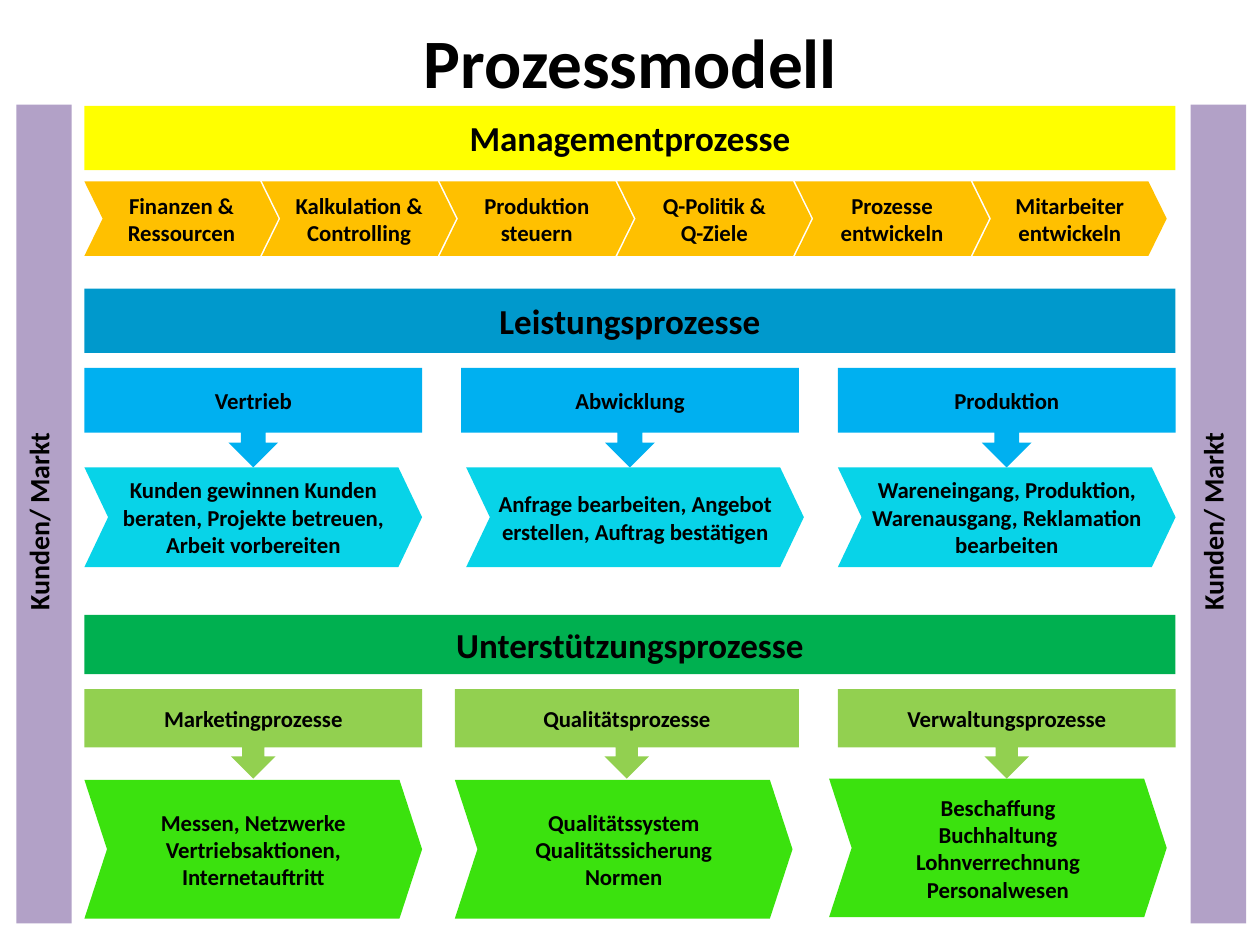
from pptx import Presentation
from pptx.dml.color import RGBColor
from pptx.enum.shapes import MSO_SHAPE
from pptx.enum.text import MSO_ANCHOR, PP_ALIGN
from pptx.util import Inches, Pt


def paint(hue):
    return RGBColor.from_string(hue)


def style(frame, size):
    for para in frame.paragraphs:
        para.alignment = PP_ALIGN.CENTER
        for run in para.runs:
            font = run.font
            font.name, font.size, font.bold = "Calibri", Pt(size), True
            font.color.rgb = paint("000000")


def block(slide, kind, box, hue, text, size, adjust=()):
    shape = slide.shapes.add_shape(kind, *[Inches(v) for v in box])
    shape.shadow.inherit = False
    shape.fill.solid()
    shape.fill.fore_color.rgb = paint(hue)
    shape.line.fill.background()
    for i, value in enumerate(adjust):
        shape.adjustments[i] = value
    frame = shape.text_frame
    frame.word_wrap = True
    frame.vertical_anchor = MSO_ANCHOR.MIDDLE
    frame.margin_left = frame.margin_right = Inches(0.04)
    frame.margin_top = frame.margin_bottom = Inches(0.04)
    frame.paragraphs[0].text = text
    style(frame, size)
    return shape


def heading(slide, box, text):
    title = slide.shapes.title
    title.left, title.top, title.width, title.height = [Inches(v) for v in box]
    title.text_frame.text = text
    title.text_frame.vertical_anchor = MSO_ANCHOR.MIDDLE
    style(title.text_frame, 39.6)


def market(slide, box):
    shape = block(slide, MSO_SHAPE.RECTANGLE, box, "B2A1C7", "Kunden/ Markt", 16)
    frame = shape.text_frame
    frame.vertical_anchor = MSO_ANCHOR.TOP
    frame.margin_top, frame.margin_bottom = Inches(0.12), 0
    # python-pptx has no public setting for text direction
    frame._txBody.bodyPr.set("vert", "vert270")


def banner(slide, box, hue, text):
    block(slide, MSO_SHAPE.RECTANGLE, box, hue, text, 20)


def chain(slide, box, hue, steps):
    left, top, width, height = box
    pitch = 1.41
    step = width - pitch * (len(steps) - 1)
    for i, text in enumerate(steps):
        block(slide, MSO_SHAPE.CHEVRON, (left + i * pitch, top, step, height),
              hue, text, 13, [0.246])


def stage(slide, head, body, hues, texts, notch):
    """A callout whose arrow points down to a chevron."""
    block(slide, MSO_SHAPE.DOWN_ARROW_CALLOUT, head, hues[0], texts[0], 13,
          [0.25, 0.25, 0.25, 0.65])
    block(slide, MSO_SHAPE.CHEVRON, body, hues[1], texts[1], 13, [notch])


def main():
    deck = Presentation()
    deck.slide_width, deck.slide_height = Inches(10), Inches(7.5)
    slide = deck.slides.add_slide(deck.slide_layouts[5])
    left, wide, col = 0.67, 8.66, 2.68

    # Title and the two market bars
    heading(slide, (0.13, 0.14, 9.75, 0.68), "Prozessmodell")
    for x in (0.13, 9.45):
        market(slide, (x, 0.83, 0.44, 6.5))

    # Management
    banner(slide, (left, 0.84, wide, 0.51), "FFFF00", "Managementprozesse")
    chain(slide, (left, 1.44, 8.59, 0.59), "FFC000", [
        "Finanzen & Ressourcen", "Kalkulation & Controlling",
        "Produktion steuern", "Q-Politik &\vQ-Ziele",
        "Prozesse entwickeln", "Mitarbeiter entwickeln"])

    # Core services: head left, body left, texts
    banner(slide, (left, 2.29, wide, 0.51), "0099CC", "Leistungsprozesse")
    core = [
        (left, left, "Vertrieb", "Kunden gewinnen Kunden beraten, "
         "Projekte betreuen, Arbeit vorbereiten"),
        (3.66, 3.7, "Abwicklung", "Anfrage bearbeiten, Angebot erstellen, "
         "Auftrag bestätigen"),
        (6.65, 6.65, "Produktion", "Wareneingang, Produktion, "
         "Warenausgang, Reklamation bearbeiten")]
    for x, low, *texts in core:
        stage(slide, (x, 2.92, col, 0.79), (low, 3.71, col, 0.79),
              ("00B0F0", "08D3E8"), texts, 0.238)

    # Support: head left, head width, body left, body top, texts
    banner(slide, (left, 4.88, wide, 0.47), "00B050", "Unterstützungsprozesse")
    support = [
        (left, col, left, 6.19, "Marketingprozesse",
         "Messen, Netzwerke Vertriebsaktionen, Internetauftritt"),
        (3.61, 2.73, 3.61, 6.19, "Qualitätsprozesse",
         "Qualitätssystem Qualitätssicherung\vNormen"),
        (6.65, col, 6.58, 6.18, "Verwaltungsprozesse",
         "Beschaffung\vBuchhaltung\vLohnverrechnung\vPersonalwesen")]
    for x, width, low, top, *texts in support:
        stage(slide, (x, 5.47, width, 0.71), (low, top, col, 1.1),
              ("92D050", "3BE20E"), texts, 0.163)

    deck.save("out.pptx")


if __name__ == "__main__":
    main()
